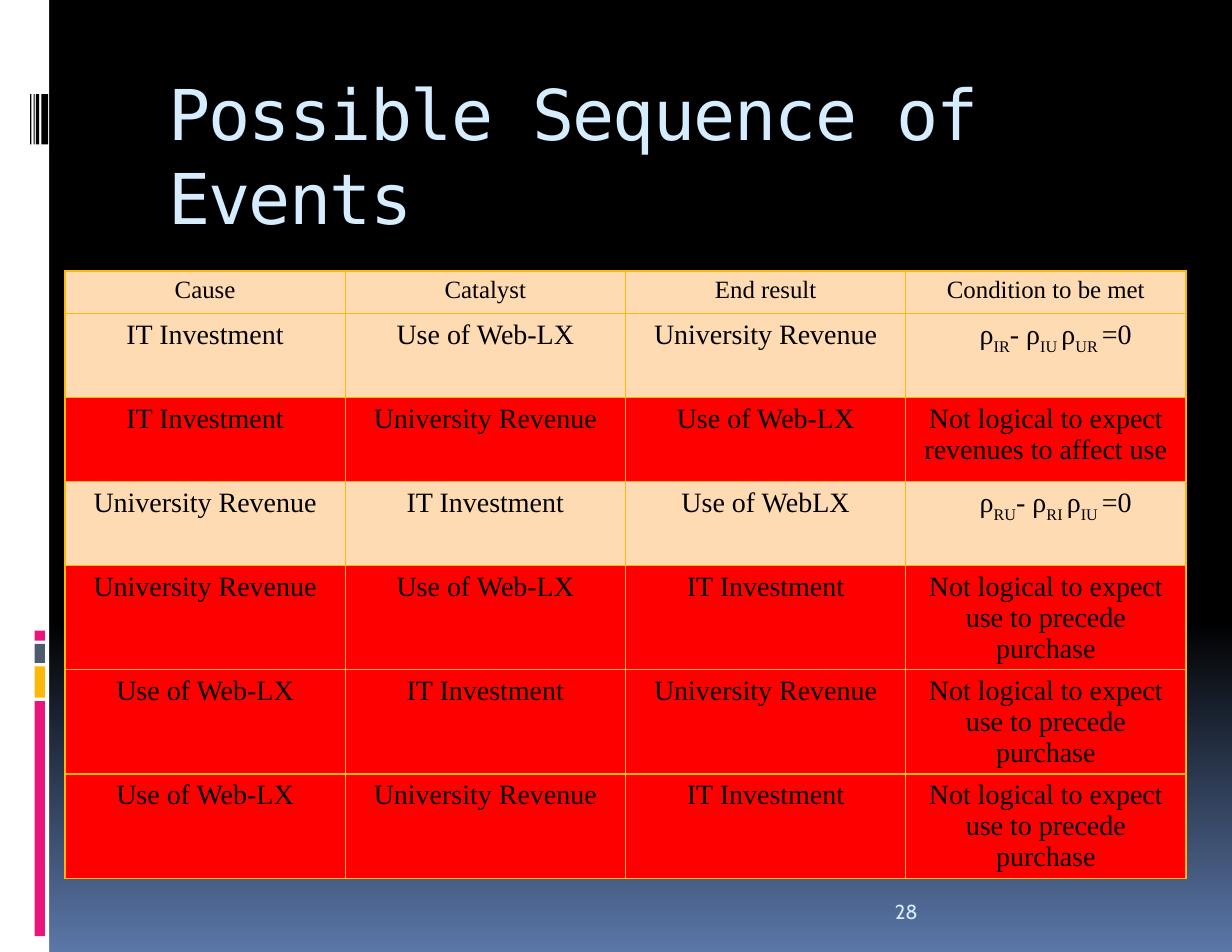
from copy import deepcopy
from dataclasses import dataclass

from lxml.etree import SubElement
from pptx import Presentation
from pptx.dml.color import RGBColor
from pptx.enum.shapes import MSO_SHAPE
from pptx.enum.text import MSO_ANCHOR, MSO_AUTO_SIZE, PP_ALIGN
from pptx.oxml.ns import qn
from pptx.util import Inches, Pt


@dataclass(frozen=True)
class Theme:
    black: str = "000000"
    white: str = "FFFFFF"
    pale_blue: str = "D6ECFF"
    sky: str = "5B77A8"
    pink: str = "EA157A"
    gold: str = "FEB80A"
    slate: str = "4E5B6F"
    cream: str = "FFDBB3"
    red: str = "FF0000"
    title_font: str = "DejaVu Sans Mono"
    table_font: str = "Times New Roman"
    number_font: str = "Cabin"
    title_size: float = 45
    header_size: float = 16
    cell_size: float = 18
    number_size: float = 13


T = Theme()

HEADERS = ("Cause", "Catalyst", "End result", "Condition to be met")
IT, USE, REVENUE = "IT Investment", "Use of Web-LX", "University Revenue"
NOT_PURCHASE = "Not logical to expect use to precede purchase"
# A condition is either a sentence or the three subscripts of its formula.
SEQUENCES = (
    (IT, USE, REVENUE, ("IR", "IU ", "UR ")),
    (IT, REVENUE, USE, "Not logical to expect revenues to affect use"),
    (REVENUE, IT, "Use of WebLX", ("RU", "RI ", "IU ")),
    (REVENUE, USE, IT, NOT_PURCHASE),
    (USE, IT, REVENUE, NOT_PURCHASE),
    (USE, REVENUE, IT, NOT_PURCHASE),
)


def rgb(value):
    return RGBColor.from_string(value)


def add_text(p, text, *, font, size, color, align=PP_ALIGN.LEFT,
             subscript=False, spacing=None):
    p.alignment = align
    r = p.add_run()
    r.text = text
    r.font.name, r.font.size = font, Pt(size)
    r.font.color.rgb = rgb(color)
    if subscript:
        r.font._element.set("baseline", "-30000")
    if spacing is not None:
        r.font._element.set("spc", str(round(spacing * 100)))


def set_frame(tf, anchor):
    tf.word_wrap = True
    tf.auto_size = MSO_AUTO_SIZE.NONE
    tf.vertical_anchor = anchor
    tf.margin_left = tf.margin_right = Inches(0.11)
    tf.margin_top = tf.margin_bottom = Inches(0.06)


def set_background(s):
    fill = s.background.fill
    fill.gradient()
    fill.gradient_angle = 270
    stops = s.element.find(".//" + qn("a:gsLst"))
    stops.append(deepcopy(stops[-1]))
    values = ((0, T.black), (0.65, T.black), (1, T.sky))
    for stop, (position, color) in zip(fill.gradient_stops, values):
        stop.position = position
        stop.color.rgb = rgb(color)


def add_bar(s, left, top, width, height, color):
    sp = s.shapes.add_shape(MSO_SHAPE.RECTANGLE, Inches(left), Inches(top),
                            Inches(width), Inches(height))
    sp.shadow.inherit = False
    sp.fill.solid()
    sp.fill.fore_color.rgb = rgb(color)
    sp.line.fill.background()


def add_side_band(s):
    add_bar(s, 0, 0, 0.44, 8.5, T.white)
    for top, height, color in ((6.26, 2.1, T.pink), (5.95, 0.28, T.gold),
                               (5.75, 0.17, T.slate), (5.63, 0.09, T.pink)):
        add_bar(s, 0.31, top, 0.09, height, color)
    for left, width in ((0.37, 0.06), (0.32, 0.03), (0.3, 0.01), (0.27, 0.01)):
        add_bar(s, left, 0.84, width, 0.45, T.black)


def add_title(s, text):
    title = s.shapes.title
    title.left, title.top = Inches(1.39), Inches(0.57)
    title.width, title.height = Inches(9.35), Inches(1.42)
    set_frame(title.text_frame, MSO_ANCHOR.TOP)
    add_text(title.text_frame.paragraphs[0], text, font=T.title_font,
             size=T.title_size, color=T.pale_blue, spacing=-1.1)


def set_borders(cell):
    """Put the four borders ahead of the fill, as the schema asks."""
    tcPr = cell._tc.get_or_add_tcPr()
    for i, side in enumerate(("lnL", "lnR", "lnT", "lnB")):
        ln = SubElement(tcPr, qn(f"a:{side}"), w=str(Pt(0.94)))
        solid = SubElement(ln, qn("a:solidFill"))
        SubElement(solid, qn("a:srgbClr"), val=T.gold)
        tcPr.insert(i, ln)


def fill_cell(cell, content, fill, size):
    cell.fill.solid()
    cell.fill.fore_color.rgb = rgb(fill)
    set_borders(cell)
    p = cell.text_frame.paragraphs[0]
    style = dict(font=T.table_font, size=size, color=T.black)
    if isinstance(content, str):
        add_text(p, content, align=PP_ALIGN.CENTER, **style)
    else:
        p.level = 1
        for symbol, index in zip(("ρ", "- ρ", "ρ"), content):
            add_text(p, symbol, **style)
            add_text(p, index, subscript=True, **style)
        add_text(p, "=0", **style)
    pPr = p._p.get_or_add_pPr()
    if p.level:
        pPr.set("marL", str(Inches(0.56)))
        pPr.set("indent", "0")
    before = SubElement(pPr, qn("a:spcBef"))
    SubElement(before, qn("a:spcPct"), val="20000")


def add_sequence_table(s):
    rows = (HEADERS, *SEQUENCES)
    frame = s.shapes.add_table(len(rows), len(HEADERS), Inches(0.58),
                               Inches(2.42), Inches(10.01), Inches(4.88))
    table = frame.table
    table.first_row = table.horz_banding = False
    for i, row in enumerate(rows):
        header = i == 0
        table.rows[i].height = Inches(0.38 if header else 0.75)
        rejected = not header and isinstance(row[-1], str)
        for j, content in enumerate(row):
            fill_cell(table.cell(i, j), content,
                      T.red if rejected else T.cream,
                      T.header_size if header else T.cell_size)


def add_page_number(s, number):
    box = s.shapes.add_textbox(Inches(7.88), Inches(7.74),
                               Inches(2.29), Inches(0.57))
    set_frame(box.text_frame, MSO_ANCHOR.BOTTOM)
    add_text(box.text_frame.paragraphs[0], number, font=T.number_font,
             size=T.number_size, color=T.pale_blue)


def main():
    prs = Presentation()
    prs.slide_width, prs.slide_height = Inches(11), Inches(8.5)
    s = prs.slides.add_slide(prs.slide_layouts[5])
    set_background(s)
    add_side_band(s)
    add_title(s, "Possible Sequence of Events")
    add_sequence_table(s)
    add_page_number(s, "28")
    prs.save("out.pptx")


if __name__ == "__main__":
    main()
